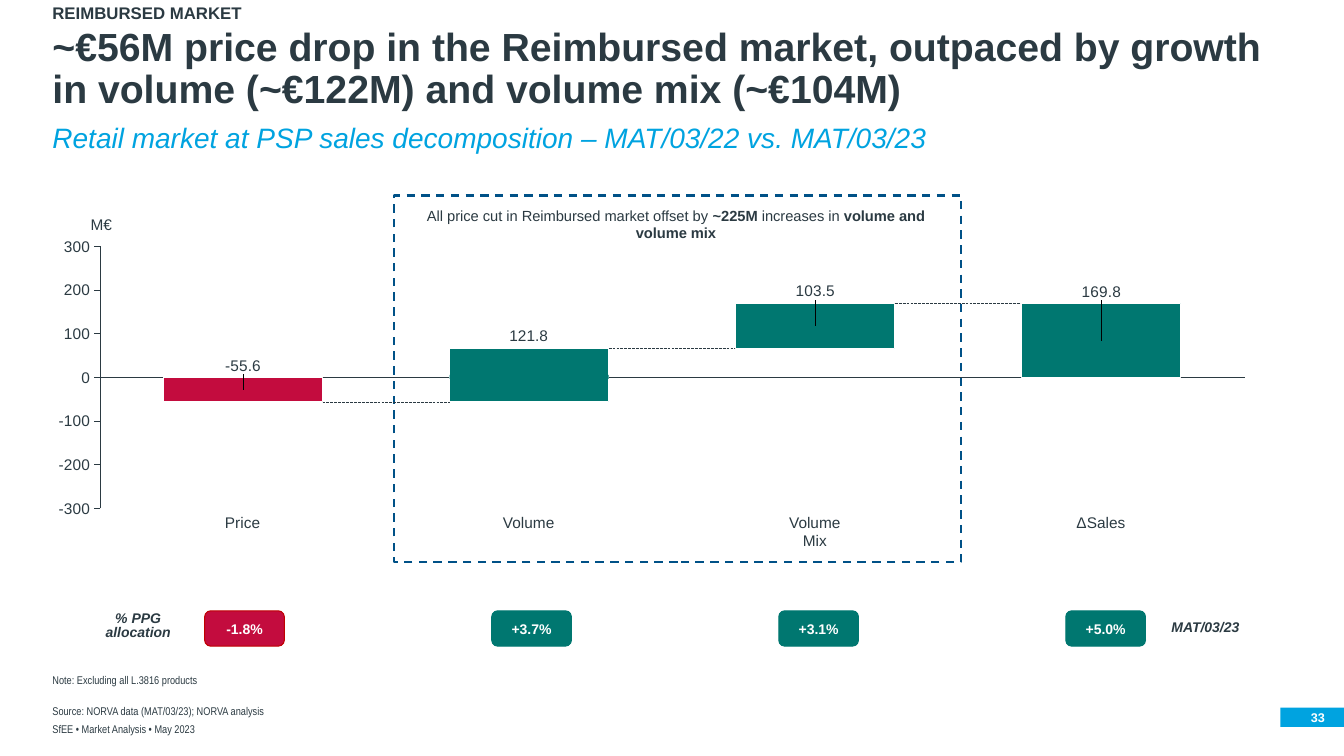
from lxml import etree
from pptx import Presentation
from pptx.chart.data import CategoryChartData
from pptx.dml.color import RGBColor
from pptx.enum.chart import XL_CHART_TYPE, XL_LABEL_POSITION, XL_TICK_LABEL_POSITION, XL_TICK_MARK
from pptx.enum.dml import MSO_LINE
from pptx.enum.shapes import MSO_CONNECTOR, MSO_SHAPE
from pptx.enum.text import MSO_ANCHOR, MSO_AUTO_SIZE, PP_ALIGN
from pptx.oxml import parse_xml
from pptx.oxml.ns import nsdecls, qn
from pptx.util import Inches, Pt

STACKED = XL_CHART_TYPE.COLUMN_STACKED
LABEL_CENTER = XL_LABEL_POSITION.CENTER
NO_LABELS = XL_TICK_LABEL_POSITION.NONE
TICK_NONE, TICK_OUT = XL_TICK_MARK.NONE, XL_TICK_MARK.OUTSIDE
DASH, LONG_DASH = MSO_LINE.DASH, MSO_LINE.LONG_DASH
STRAIGHT = MSO_CONNECTOR.STRAIGHT
RECT, ROUNDED = MSO_SHAPE.RECTANGLE, MSO_SHAPE.ROUNDED_RECTANGLE
TOP, MIDDLE, BOTTOM = MSO_ANCHOR.TOP, MSO_ANCHOR.MIDDLE, MSO_ANCHOR.BOTTOM
LEFT, CENTER, RIGHT = PP_ALIGN.LEFT, PP_ALIGN.CENTER, PP_ALIGN.RIGHT
NO_FIT = MSO_AUTO_SIZE.NONE

INK, SKY, NAVY, WHITE = "2B3A42", "00A3E0", "005187", "FFFFFF"
GREEN, RED, DARK_RED = "007770", "C30C3E", "C00000"

# Chart frame, and the plot area as shares of that frame
CHART_X, CHART_Y, CHART_W, CHART_H = 0.44, 2.33, 12, 2.83
PLOT_X, PLOT_Y, PLOT_W, PLOT_H = 0.046, 0.041, 0.946, 0.918
AXIS_LIMIT, GAP = 300, 80
STEP = CHART_W * PLOT_W / 4
BAR = STEP / (1 + GAP / 100)

CATEGORIES = ["Price", "Volume", "Volume\vMix", "ΔSales"]
UPPER = [-55.6, 66.2, 66.2, 169.8]
LOWER = [None, -55.6, 103.5, None]


def rgb(color):
    return RGBColor.from_string(color)


def bar_center(index):
    return CHART_X + CHART_W * PLOT_X + STEP * (index + 0.5)


def value_y(value):
    share = (AXIS_LIMIT - value) / (2 * AXIS_LIMIT)
    return CHART_Y + CHART_H * (PLOT_Y + PLOT_H * share)


def place(shape, x, y, w, h):
    shape.left, shape.top = Inches(x), Inches(y)
    shape.width, shape.height = Inches(w), Inches(h)


def write(shape, text, size, color=INK, bold=False, italic=False, font="Arial",
          align=LEFT, anchor=TOP, spacing=1.0, wrap=True):
    """Fill the shape with text; parts between ** marks are bold."""
    frame = shape.text_frame
    frame.margin_left = frame.margin_right = frame.margin_top = frame.margin_bottom = 0
    frame.auto_size, frame.word_wrap, frame.vertical_anchor = NO_FIT, wrap, anchor
    frame.text = text.replace("**", "")
    for paragraph in frame.paragraphs:
        paragraph.alignment, paragraph.line_spacing = align, spacing
        paragraph.space_before = Pt(0)
        if "**" in text:
            paragraph.text = ""
            for part in text.split("**"):
                paragraph.add_run().text = part
        for index, run in enumerate(paragraph.runs):
            run.font.name, run.font.size = font, Pt(size)
            run.font.bold = bold or ("**" in text and index % 2 == 1)
            run.font.italic = italic
            run.font.color.rgb = rgb(color)


def add_text(slide, box, text, size, **style):
    write(slide.shapes.add_textbox(*map(Inches, box)), text, size, **style)


def add_box(slide, kind, box, fill=None, line=None, width=0.75):
    shape = slide.shapes.add_shape(kind, *map(Inches, box))
    shape.shadow.inherit = False
    if fill:
        shape.fill.solid()
        shape.fill.fore_color.rgb = rgb(fill)
    else:
        shape.fill.background()
    if line:
        shape.line.color.rgb = rgb(line)
        shape.line.width = Pt(width)
    else:
        shape.line.fill.background()
    return shape


def add_bridge(slide, index, level):
    """Dashed line from one bar to the next at the given value."""
    y = Inches(value_y(level))
    bridge = slide.shapes.add_connector(
        STRAIGHT, Inches(bar_center(index) + BAR / 2), y,
        Inches(bar_center(index + 1) - BAR / 2), y)
    bridge.line.color.rgb = rgb(INK)
    bridge.line.width = Pt(0.25)
    bridge.line.dash_style = LONG_DASH
    etree.SubElement(bridge._element.spPr, qn("a:effectLst"))


def layout_xml(**parts):
    items = "".join(f'<c:{name} val="{value}"/>' for name, value in parts.items())
    return parse_xml(f'<c:layout {nsdecls("c")}><c:manualLayout>{items}</c:manualLayout></c:layout>')


def label_above_bar(series, index, bottom, top):
    """Lift the point's label from the bar's middle to above its top."""
    label = series.points[index].data_label
    label.font.size, label.font.name = Pt(11), "Arial"
    label.font.color.rgb = rgb(INK)
    label.position = LABEL_CENTER
    lift = (value_y(bottom) - value_y(top)) / 2 + 0.12
    entry = series._element.find(qn("c:dLbls")).findall(qn("c:dLbl"))[-1]
    entry.find(qn("c:idx")).addnext(layout_xml(x=0, y=round(-lift / CHART_H, 3)))


def show_leader_lines(series):
    series.data_labels.show_value = False
    series._element.find(qn("c:dLbls")).append(parse_xml(
        f'<c:extLst {nsdecls("c")}><c:ext uri="{{CE6537A1-D6FC-4f65-9D91-7224C49458BB}}" '
        'xmlns:c15="http://schemas.microsoft.com/office/drawing/2012/chart">'
        '<c15:showLeaderLines val="1"/></c:ext></c:extLst>'))


def style_axis(axis, tick):
    axis.major_tick_mark, axis.minor_tick_mark = tick, TICK_NONE
    axis.has_major_gridlines = False
    axis.format.line.color.rgb = rgb(INK)
    axis.format.line.width = Pt(0.75)


def add_waterfall(slide):
    data = CategoryChartData()
    data.categories = ["1", "2", "3", "4"]
    data.add_series("Series 1", UPPER)
    data.add_series("Series 2", LOWER)
    frame = map(Inches, (CHART_X, CHART_Y, CHART_W, CHART_H))
    chart = slide.shapes.add_chart(STACKED, *frame, data).chart
    chart.has_legend = chart.has_title = False
    chart.font.name, chart.font.size = "Arial", Pt(10)
    chart.font.color.rgb = rgb(INK)

    style_axis(chart.category_axis, TICK_NONE)
    chart.category_axis.tick_label_position = NO_LABELS
    values = chart.value_axis
    style_axis(values, TICK_OUT)
    values.minimum_scale, values.maximum_scale = -AXIS_LIMIT, AXIS_LIMIT
    values.major_unit = 100
    values.tick_labels.font.size, values.tick_labels.font.name = Pt(11), "Arial"
    values.tick_labels.font.color.rgb = rgb(INK)
    values.tick_labels.number_format = '#,##0;"-"#,##0'
    values.tick_labels.number_format_is_linked = False

    plot = chart.plots[0]
    plot.gap_width, plot.overlap, plot.vary_by_categories = GAP, 100, False
    upper, lower = plot.series
    price, hidden_base = upper.points[0].format, upper.points[2].format
    for part in (upper, lower):
        part.invert_if_negative = False
    for part in (upper.format, lower.format, price):
        part.fill.solid()
        part.fill.fore_color.rgb = rgb(RED if part is price else GREEN)
        part.line.color.rgb = rgb(WHITE)
        part.line.width = Pt(0.75)
    hidden_base.fill.background()
    hidden_base.line.fill.background()

    label_above_bar(upper, 0, UPPER[0], 0)
    label_above_bar(upper, 3, 0, UPPER[3])
    label_above_bar(lower, 2, UPPER[2], UPPER[3])
    show_leader_lines(upper)
    show_leader_lines(lower)

    area = chart._chartSpace.chart.plotArea
    for old in area.findall(qn("c:layout")):
        area.remove(old)
    area.insert(0, layout_xml(layoutTarget="inner", xMode="edge", yMode="edge",
                              x=PLOT_X, y=PLOT_Y, w=PLOT_W, h=PLOT_H))


def main():
    deck = Presentation()
    deck.slide_width, deck.slide_height = Inches(13.33), Inches(7.5)
    slide = deck.slides.add_slide(deck.slide_layouts[5])

    title = slide.shapes.title
    place(title, 0.52, 0.26, 12.3, 0.85)
    write(title, "~€56M price drop in the Reimbursed market, outpaced by growth in volume "
          "(~€122M) and volume mix (~€104M)", 28, bold=True, anchor=BOTTOM, spacing=0.9)
    add_text(slide, (0.52, 0.05, 12.3, 0.18), "REIMBURSED MARKET", 12, bold=True, spacing=0.9)
    add_text(slide, (0.52, 1.23, 12.3, 0.3),
             "Retail market at PSP sales decomposition – MAT/03/22 vs. MAT/03/23",
             20, color=SKY, italic=True, spacing=0.9)

    add_text(slide, (4.01, 2.05, 5.39, 0.53),
             "All price cut in Reimbursed market offset by **~225M **increases in "
             "**volume and volume mix**", 10.5, align=CENTER)
    add_box(slide, RECT, (3.91, 1.94, 5.62, 3.64), line=NAVY, width=1.5).line.dash_style = DASH

    for index, level in enumerate((UPPER[0], UPPER[1], UPPER[3])):
        add_bridge(slide, index, level)
    add_waterfall(slide)
    add_box(slide, RECT, (bar_center(1) - BAR / 2, 3.72, BAR, 0.04), fill=GREEN)
    add_text(slide, (0.9, 2.14, 0.21, 0.18), "M€", 11, align=CENTER, anchor=BOTTOM, wrap=False)
    add_text(slide, (bar_center(1) - 0.22, 3.24, 0.43, 0.18), "121.8", 11,
             align=CENTER, anchor=BOTTOM, wrap=False)

    allocations = ["-1.8%", "+3.7%", "+3.1%", "+5.0%"]
    for index, (category, allocation) in enumerate(zip(CATEGORIES, allocations)):
        add_text(slide, (bar_center(index) - 0.27, 5.09, 0.53, 0.37), category, 11,
                 align=CENTER, wrap=False)
        fill, line = (RED, DARK_RED) if index == 0 else (GREEN, GREEN)
        pill = add_box(slide, ROUNDED, (2.03 + 2.847 * index, 6.06, 0.79, 0.35), fill, line)
        write(pill, allocation, 10, color=WHITE, bold=True, align=CENTER, anchor=MIDDLE)
    for box, text in (((1, 6.02, 0.74, 0.39), "% PPG\nallocation"),
                      ((11.56, 6.06, 0.79, 0.35), "MAT/03/23")):
        add_text(slide, box, text, 10, bold=True, italic=True, align=CENTER,
                 anchor=MIDDLE, spacing=0.85, wrap=False)

    for y, text in ((6.69, "Note: Excluding all L.3816 products"),
                    (7, "Source: NORVA data (MAT/03/23); NORVA analysis"),
                    (7.18, "SfEE • Market Analysis • May 2023")):
        add_text(slide, (0.52, y, 8.27, 0.12), text, 8, font="Arial Narrow",
                 anchor=BOTTOM, spacing=0.9)
    add_box(slide, RECT, (12.7, 7.02, 0.63, 0.19), fill=SKY)
    add_text(slide, (12.7, 7.02, 0.44, 0.19), "33", 9, color=WHITE, bold=True,
             align=RIGHT, anchor=MIDDLE)
    deck.save("out.pptx")


if __name__ == "__main__":
    main()
